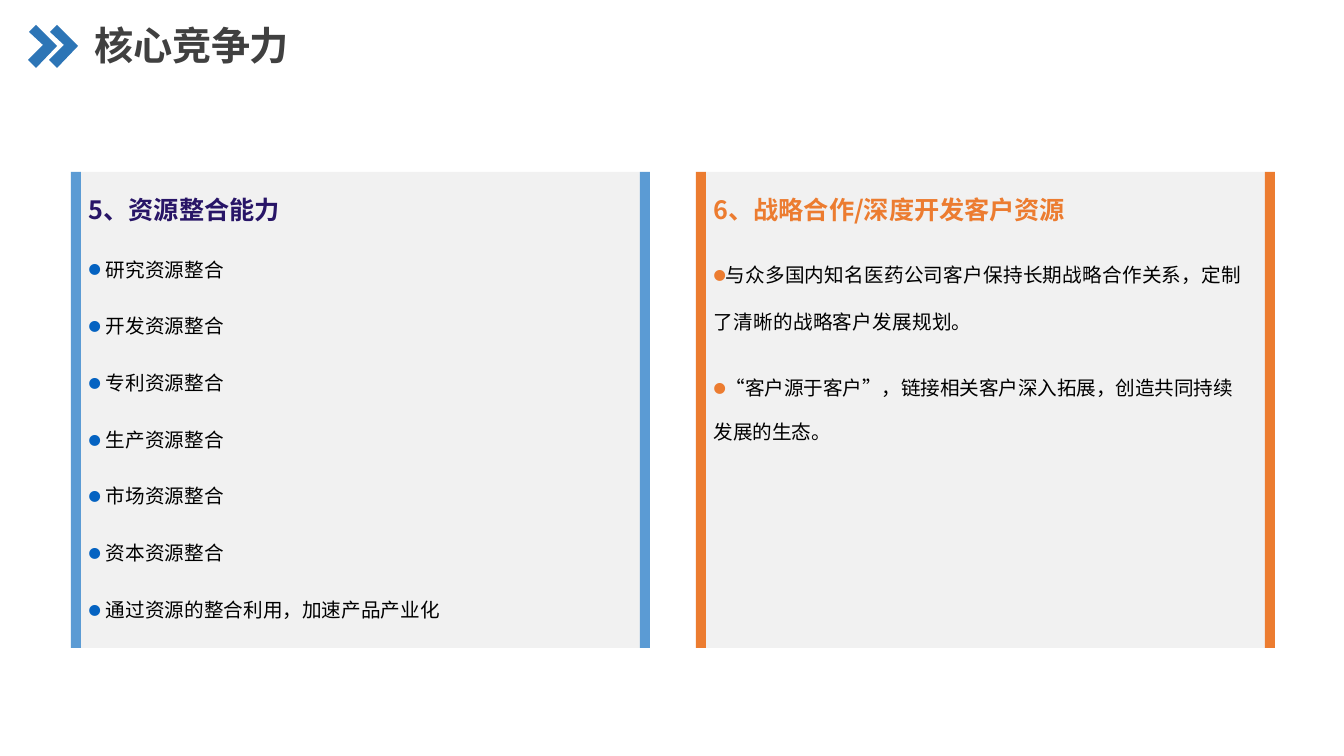
from lxml.etree import SubElement
from pptx import Presentation
from pptx.dml.color import RGBColor
from pptx.enum.shapes import MSO_SHAPE
from pptx.oxml.ns import qn
from pptx.util import Emu, Pt

FONT = "Noto Sans CJK SC"
BULLET_FONT = "Roboto"
BLACK = RGBColor(0x00, 0x00, 0x00)
TITLE_GREY = RGBColor(0x40, 0x40, 0x40)
CHEVRON_BLUE = RGBColor(0x2D, 0x75, 0xB6)
PANEL_GREY = RGBColor(0xF1, 0xF1, 0xF1)
BAR_BLUE = RGBColor(0x5B, 0x9B, 0xD4)
HEADING_NAVY = RGBColor(0x28, 0x15, 0x67)
BULLET_BLUE = RGBColor(0x04, 0x62, 0xC1)
ORANGE = RGBColor(0xEC, 0x7C, 0x30)

RESOURCES = [
    "研究资源整合", "开发资源整合", "专利资源整合", "生产资源整合",
    "市场资源整合", "资本资源整合", "通过资源的整合利用，加速产品产业化",
]
PARTNERSHIPS = [
    "与众多国内知名医药公司客户保持长期战略合作关系，定制了清晰的战略客户发展规划。",
    "“客户源于客户”，链接相关客户深入拓展，创造共同持续发展的生态。",
]


def px(length):
    """Turn pixels into EMU."""
    return Emu(round(length * 914400 / 100.8))


def paint(shape, color):
    """Give a shape a plain fill without line or shadow."""
    shape.shadow.inherit = False
    shape.fill.solid()
    shape.fill.fore_color.rgb = color
    shape.line.fill.background()


def add_text_frame(slide, left, top, width, height):
    """Add a wrapping text box without margins and return its frame."""
    text_frame = slide.shapes.add_textbox(px(left), px(top), px(width), px(height)).text_frame
    text_frame.word_wrap = True
    text_frame.margin_left = text_frame.margin_right = 0
    text_frame.margin_top = text_frame.margin_bottom = 0
    return text_frame


def write(paragraph, text, size, color, bold=False, spacing=0):
    """Set the text of a paragraph and format its runs."""
    paragraph.text = text
    for run in paragraph.runs:
        run.font.name = FONT
        run.font.size = Pt(size)
        run.font.bold = bold
        run.font.color.rgb = color
        properties = run.font._element
        properties.set("spc", str(round(spacing * 100)))
        SubElement(properties, qn("a:ea")).set("typeface", FONT)


def add_bullet(paragraph, color, hanging):
    """Put a coloured dot before a paragraph."""
    properties = paragraph._p.get_or_add_pPr()
    properties.set("marL", str(px(hanging)))
    properties.set("indent", str(-px(hanging)))
    bullet_color = SubElement(properties, qn("a:buClr"))
    SubElement(bullet_color, qn("a:srgbClr")).set("val", str(color))
    SubElement(properties, qn("a:buFont")).set("typeface", BULLET_FONT)
    SubElement(properties, qn("a:buChar")).set("char", "⚫")


def add_header(slide, left, top):
    """Draw the double chevron and the slide title."""
    outline = [(8, 0), (1, 7), (15, 20), (0, 35), (8, 43), (29, 21)]
    for offset in (0, 21):
        points = [(px(left + offset + x), px(top + y)) for x, y in outline]
        builder = slide.shapes.build_freeform(*points[0])
        builder.add_line_segments(points[1:])
        paint(builder.convert_to_shape(), CHEVRON_BLUE)
    text_frame = add_text_frame(slide, left + 67, top - 4, 1188, 58)
    write(text_frame.paragraphs[0], "核心竞争力", 28, TITLE_GREY, True, -0.3)


def add_panel(slide, left, top, bar_color, heading, heading_color):
    """Draw a grey panel between two bars and return its text frame."""
    width, height, bar = 579, 476, 10
    parts = [
        (left + bar, width - 2 * bar, PANEL_GREY),
        (left, bar, bar_color),
        (left + width - bar, bar, bar_color),
    ]
    for part_left, part_width, color in parts:
        shape = slide.shapes.add_shape(
            MSO_SHAPE.RECTANGLE, px(part_left), px(top), px(part_width), px(height))
        paint(shape, color)
    text_frame = add_text_frame(slide, left + 18, top + 22, 536, 440)
    write(text_frame.paragraphs[0], heading, 18, heading_color, True, -0.1)
    return text_frame


def add_item(text_frame, text, bullet_color, hanging, before, line, spacing=0):
    """Append a bulleted paragraph with a fixed line height."""
    paragraph = text_frame.add_paragraph()
    paragraph.space_before = Pt(before)
    paragraph.line_spacing = Pt(line)
    add_bullet(paragraph, bullet_color, hanging)
    write(paragraph, text, 14, BLACK, spacing=spacing)


def main():
    """Build the slide and save it."""
    presentation = Presentation()
    presentation.slide_width = px(1344)
    presentation.slide_height = px(756)
    slide = presentation.slides.add_slide(presentation.slide_layouts[6])
    add_header(slide, 28, 25)

    resources = add_panel(slide, 71, 172, BAR_BLUE, "5、资源整合能力", HEADING_NAVY)
    for text in RESOURCES:
        add_item(resources, text, BULLET_BLUE, 17, 20, 20.5)

    partners = add_panel(slide, 696, 172, ORANGE, "6、战略合作/深度开发客户资源", ORANGE)
    layouts = [(11, 33.5, 0.15), (15.5, 31.5, -0.1)]
    for text, (before, line, spacing) in zip(PARTNERSHIPS, layouts):
        add_item(partners, text, ORANGE, 0, before, line, spacing)

    presentation.save("out.pptx")


if __name__ == "__main__":
    main()
